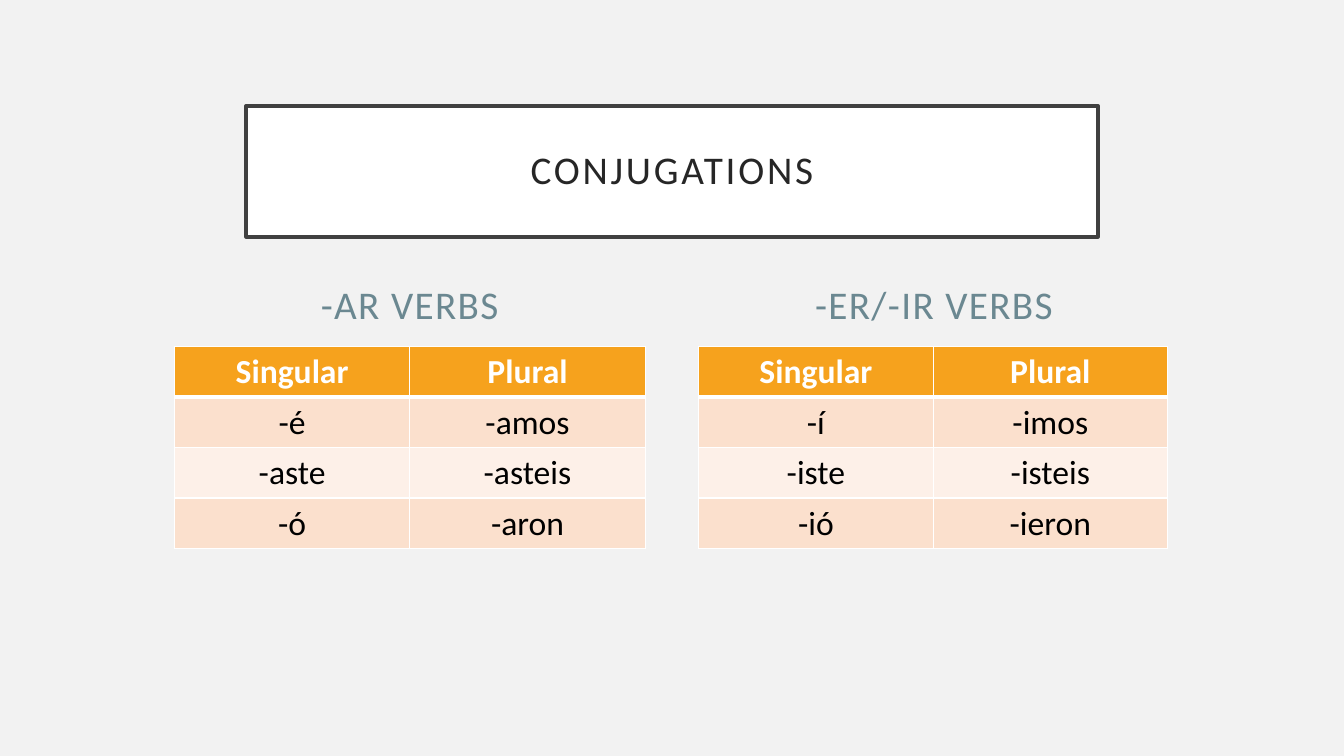
from lxml import etree
from pptx import Presentation
from pptx.dml.color import RGBColor
from pptx.enum import text
from pptx.oxml import ns
from pptx.util import Inches, Pt

# Content
TITLE = "CONJUGATIONS"
HEAD = ("Singular", "Plural")
VERBS = [
    ("-AR VERBS", 1.73, 4.67,
     [HEAD, ("-é", "-amos"), ("-aste", "-asteis"), ("-ó", "-aron")]),
    ("-ER/-IR VERBS", 6.93, 4.65,
     [HEAD, ("-í", "-imos"), ("-iste", "-isteis"), ("-ió", "-ieron")]),
]

FONT = "Calibri"
PAPER = RGBColor(0xF2, 0xF2, 0xF2)
WHITE = RGBColor(0xFF, 0xFF, 0xFF)
BLACK = RGBColor(0, 0, 0)
FRAME = RGBColor(0x40, 0x40, 0x40)
INK = RGBColor(0x26, 0x26, 0x26)
SLATE = RGBColor(0x6B, 0x88, 0x91)
ORANGE = RGBColor(0xF6, 0xA2, 0x1D)
PEACH = RGBColor(0xFB, 0xE0, 0xCD)
CREAM = RGBColor(0xFD, 0xF0, 0xE8)


def write(frame, words, size, color, bold=False, gap=0):
    """Fill a text frame with one centred paragraph; gap is letter spacing."""
    para = frame.paragraphs[0]
    para.alignment = text.PP_ALIGN.CENTER
    run = para.add_run()
    run.text = words
    if gap:
        run._r.get_or_add_rPr().set("spc", str(gap * 100))
    font = para.font
    font.name, font.size, font.bold = FONT, Pt(size), bold
    font.color.rgb = color
    return para


def edge(cell, side, width):
    """Draw a white border on one side (L, R, T or B) of a cell."""
    line = etree.SubElement(cell._tc.get_or_add_tcPr(), ns.qn("a:ln" + side),
                            w=str(Pt(width)))
    fill = etree.SubElement(line, ns.qn("a:solidFill"))
    etree.SubElement(fill, ns.qn("a:srgbClr"), val=str(WHITE))


def add_verbs(slide, name, left, width, rows):
    # Heading
    box = slide.shapes.add_textbox(Inches(left), Inches(2.53),
                                   Inches(4.67), Inches(0.77))
    frame = box.text_frame
    frame.word_wrap = True
    frame.vertical_anchor = text.MSO_ANCHOR.BOTTOM
    write(frame, name, 28, SLATE, gap=1)

    # Endings
    table = slide.shapes.add_table(len(rows), len(HEAD), Inches(left), Inches(3.44),
                                   Inches(width), Inches(2)).table
    for r, row in enumerate(rows):
        for c, word in enumerate(row):
            cell = table.cell(r, c)
            for side in "LRTB":
                thick = (r, side) in ((0, "B"), (1, "T"))
                edge(cell, side, 3 if thick else 1)
            cell.fill.solid()
            cell.fill.fore_color.rgb = ORANGE if r == 0 else PEACH if r % 2 else CREAM
            write(cell.text_frame, word, 24, BLACK if r else WHITE, bold=r == 0)


def main():
    deck = Presentation()
    deck.slide_width, deck.slide_height = Inches(13.33), Inches(7.5)
    slide = deck.slides.add_slide(deck.slide_layouts[5])
    slide.background.fill.solid()
    slide.background.fill.fore_color.rgb = PAPER

    # Framed title
    title = slide.shapes.title
    title.left, title.top = Inches(2.44), Inches(1.05)
    title.width, title.height = Inches(8.45), Inches(1.3)
    title.fill.solid()
    title.fill.fore_color.rgb = WHITE
    title.line.color.rgb = FRAME
    title.line.width = Pt(2.5)
    frame = title.text_frame
    frame.vertical_anchor = text.MSO_ANCHOR.MIDDLE
    frame.margin_left = frame.margin_right = Inches(0.2)
    frame.margin_top = frame.margin_bottom = Inches(0.2)
    write(frame, TITLE, 28, INK, gap=2).line_spacing = 0.9

    # Verb groups
    for group in VERBS:
        add_verbs(slide, *group)
    deck.save("out.pptx")


if __name__ == "__main__":
    main()
